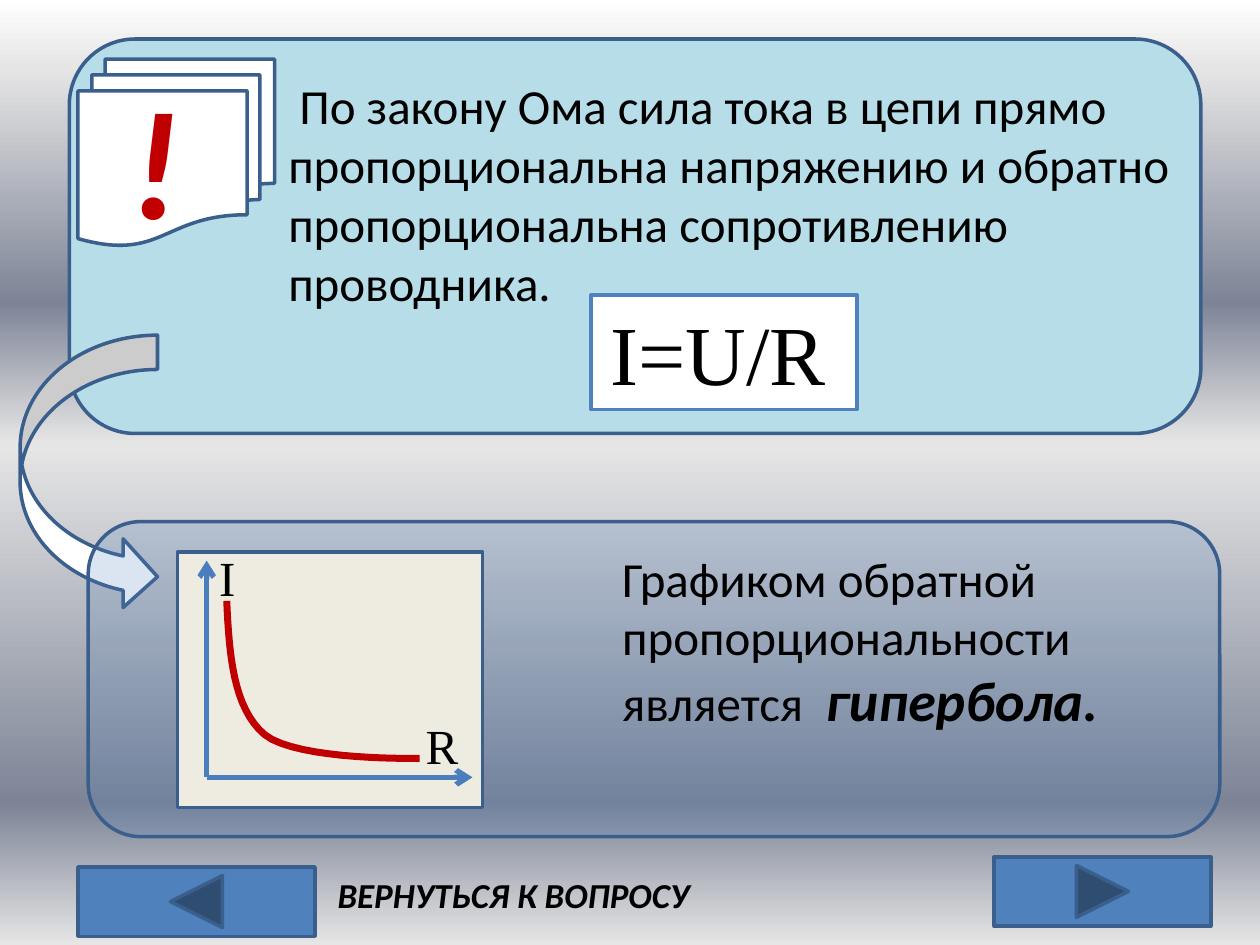
"""Builds the Ohm's law answer slide with a hyperbola graph."""
from lxml.etree import SubElement
from pptx import Presentation
from pptx.dml.color import RGBColor
from pptx.enum.shapes import MSO_CONNECTOR, MSO_SHAPE as SHAPE
from pptx.enum.text import MSO_AUTO_SIZE
from pptx.oxml.ns import qn
from pptx.util import Pt

BLACK = RGBColor(0, 0, 0)
WHITE = RGBColor(255, 255, 255)
RED = RGBColor(0xC0, 0, 0)
BLUE = RGBColor(0x4F, 0x81, 0xBD)
EDGE = RGBColor(0x3A, 0x5F, 0x8C)
AXIS = RGBColor(0x4B, 0x7E, 0xBC)
SKY = RGBColor(0xB7, 0xDE, 0xE8)
CREAM = RGBColor(0xEE, 0xEC, 0xE1)
BACKGROUND = [(0, "FFFFFF"), (7, "E6E6E6"), (32, "7D8496"),
              (47, "E6E6E6"), (85, "7D8496"), (100, "E6E6E6")]

SERIF = "Times New Roman"
STRONG = {"bold": True, "italic": True}
LAW = (" По закону Ома сила тока в цепи прямо пропорциональна напряжению "
       "и обратно пропорциональна сопротивлению проводника.")
GRAPH_NOTE = [("Графиком обратной пропорциональности является  ", {}),
              ("гипербола.", {"size": 32, **STRONG})]
FORMULA = [(" ", {"size": 18}), ("I=U/R", {"size": 48, "font": SERIF})]
ORIGIN = (118.1, 444.2)
AXIS_ENDS = [(270, 444.2), (118.1, 320.4)]
AXIS_LABELS = [("I", (118.1, 309.6, 45.4, 41)), ("R", (236.2, 405.4, 45.4, 41))]
HYPERBOLA = [
    [(129.6, 343.4), (131, 373.7), (133.2, 404.6), (151.2, 419.8)],
    [(151.2, 419.8), (169.9, 434.9), (239.8, 433.4), (239.8, 433.4)],
]
CURVE_STEPS = 16


def add_box(shapes, kind, box, fill, alpha=None):
    sp = shapes.add_shape(kind, *map(Pt, box))
    sp.shadow.inherit = False
    sp.fill.solid()
    sp.fill.fore_color.rgb = fill
    sp.line.color.rgb = EDGE
    sp.line.width = Pt(2)
    if alpha:
        color = sp.fill._xPr.find(qn("a:solidFill"))[0]
        SubElement(color, qn("a:alpha")).set("val", str(alpha * 1000))
    return sp


def add_text(shapes, text, box, size=28, font="Calibri", color=BLACK,
             bold=False, italic=False):
    sp = shapes.add_textbox(*map(Pt, box))
    tf = sp.text_frame
    tf.word_wrap = True
    tf.auto_size = MSO_AUTO_SIZE.SHAPE_TO_FIT_TEXT
    base = {"size": size, "font": font, "bold": bold, "italic": italic}
    for words, changes in [(text, {})] if isinstance(text, str) else text:
        style = {**base, **changes}
        r = tf.paragraphs[0].add_run()
        r.text = words
        r.font.size = Pt(style["size"])
        r.font.name = style["font"]
        r.font.bold = style["bold"]
        r.font.italic = style["italic"]
        r.font.color.rgb = color
    return sp


def add_axis(shapes, end):
    line = shapes.add_connector(MSO_CONNECTOR.STRAIGHT, *map(Pt, ORIGIN + end))
    line.line.color.rgb = AXIS
    line.line.width = Pt(3)
    SubElement(line.line._get_or_add_ln(), qn("a:tailEnd")).set("type", "arrow")
    SubElement(line._element.spPr, qn("a:effectLst"))


def bezier(points, t):
    weights = ((1 - t) ** 3, 3 * t * (1 - t) ** 2, 3 * t ** 2 * (1 - t), t ** 3)
    return tuple(Pt(sum(w * v for w, v in zip(weights, axis)))
                 for axis in zip(*points))


def add_curve(shapes):
    points = [bezier(part, i / CURVE_STEPS)
              for part in HYPERBOLA for i in range(1, CURVE_STEPS + 1)]
    builder = shapes.build_freeform(*map(Pt, HYPERBOLA[0][0]))
    builder.add_line_segments(points, close=False)
    sp = builder.convert_to_shape()
    sp.shadow.inherit = False
    sp.fill.background()
    sp.line.color.rgb = RED
    sp.line.width = Pt(4)


def paint_background(s):
    fill = s.background.fill
    fill.gradient()
    grad = s.background._cSld.find(".//" + qn("a:gradFill"))
    stops = grad.find(qn("a:gsLst"))
    for stop in list(stops):
        stops.remove(stop)
    for pos, color in BACKGROUND:
        stop = SubElement(stops, qn("a:gs"), pos=str(pos * 1000))
        SubElement(stop, qn("a:srgbClr"), val=color)
    grad.find(qn("a:lin")).set("ang", "5400000")


def main():
    prs = Presentation()
    prs.slide_width, prs.slide_height = Pt(720), Pt(540)
    s = prs.slides.add_slide(prs.slide_layouts[6])
    paint_background(s)

    shapes = s.shapes
    add_box(shapes, SHAPE.ROUNDED_RECTANGLE, (39.6, 22.3, 646.6, 225.4), SKY)
    add_box(shapes, SHAPE.FLOWCHART_MULTIDOCUMENT, (44.6, 33.8, 112.3, 106.6), WHITE)
    add_text(shapes, "!", (67.7, 33.8, 56.2, 113.8), size=88, color=RED, **STRONG)
    add_box(shapes, SHAPE.CURVED_RIGHT_ARROW, (11.5, 191.5, 78.5, 157.7), WHITE)
    add_box(shapes, SHAPE.ACTION_BUTTON_BACK_OR_PREVIOUS,
            (44.6, 495.4, 135.4, 39.6), BLUE)
    add_text(shapes, "ВЕРНУТЬСЯ К ВОПРОСУ", (185.8, 495.4, 241.9, 31.7),
             size=20, **STRONG)
    add_text(shapes, LAW, (157.7, 39.6, 523.4, 143.3))
    formula = add_text(shapes, FORMULA, (337.7, 168.5, 151.9, 65.5))
    formula.fill.solid()
    formula.fill.fore_color.rgb = WHITE
    formula.line.color.rgb = BLUE
    formula.line.width = Pt(2)

    graph = shapes.add_group_shape().shapes
    add_box(graph, SHAPE.ROUNDED_RECTANGLE, (50.4, 298.1, 646.6, 180), BLUE, alpha=20)
    add_text(graph, GRAPH_NOTE, (348.5, 309.6, 309.6, 113.8))
    add_box(graph, SHAPE.RECTANGLE, (101.5, 315.4, 174.2, 146.2), CREAM)
    for end in AXIS_ENDS:
        add_axis(graph, end)
    add_curve(graph)
    for label, box in AXIS_LABELS:
        add_text(graph, label, box, font=SERIF)

    add_box(shapes, SHAPE.ACTION_BUTTON_FORWARD_OR_NEXT,
            (568.1, 489.6, 123.8, 39.6), BLUE)
    prs.save("out.pptx")


if __name__ == "__main__":
    main()
